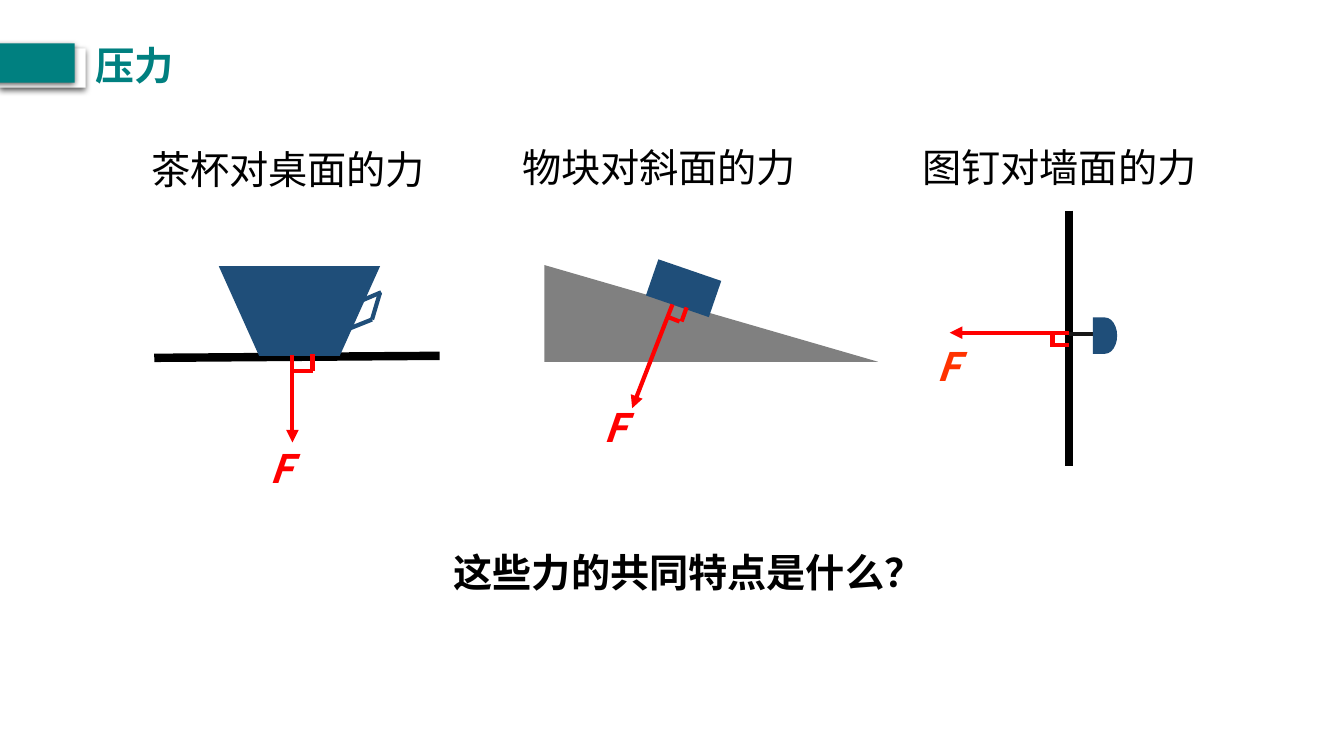
from collections import namedtuple

from lxml.etree import SubElement
from pptx import Presentation
from pptx.dml.color import RGBColor
from pptx.enum.shapes import MSO_CONNECTOR as Connector, MSO_SHAPE as Preset
from pptx.oxml.ns import qn
from pptx.util import Pt

PX = 9144
LINE_HEIGHT = 57
FONT = "Noto Sans CJK SC"
BLACK = RGBColor(0x00, 0x00, 0x00)
NEEDLE = RGBColor(0x18, 0x17, 0x17)
WHITE = RGBColor(0xFF, 0xFF, 0xFF)
NAVY = RGBColor(0x1F, 0x4E, 0x79)
GRAY = RGBColor(0x80, 0x80, 0x80)
TEAL = RGBColor(0x00, 0x80, 0x80)
RED = RGBColor(0xFF, 0x00, 0x00)
ORANGE = RGBColor(0xFF, 0x33, 0x00)

Box = namedtuple("Box", "left top width height")
HEADING = {"bold": False, "italic": False}
STRONG = {"bold": True, "italic": False}
SYMBOL = {"bold": True, "italic": True}


def within(box, left, top, width, height):
    return Box(box.left + left, box.top + top, width, height)


def emu(box):
    return [length * PX for length in box]


def write(shapes, box, words, color, style):
    frame = shapes.add_textbox(*emu(box)).text_frame
    frame.word_wrap = True
    run = frame.paragraphs[0].add_run()
    run.text = words
    run.font.color.rgb = color
    for attribute, value in {"size": Pt(28), "name": FONT, **style}.items():
        setattr(run.font, attribute, value)
    SubElement(run.font._element, qn("a:ea"), typeface=FONT)


def paint(shape, color):
    shape.shadow.inherit = False
    shape.fill.solid()
    shape.fill.fore_color.rgb = color
    shape.line.fill.background()
    return shape


def solid(shapes, preset, box, color, rotation=0):
    shape = paint(shapes.add_shape(preset, *emu(box)), color)
    shape.rotation = rotation
    return shape


def stroke(shapes, box, segments, color, width=3, arrow=False):
    for x1, y1, x2, y2 in segments:
        segment = shapes.add_connector(
            Connector.STRAIGHT,
            (box.left + x1) * PX, (box.top + y1) * PX,
            (box.left + x2) * PX, (box.top + y2) * PX,
        )
        segment.line.color.rgb = color
        segment.line.width = Pt(width)
        if arrow:
            SubElement(segment.line._get_or_add_ln(), qn("a:tailEnd"), type="triangle")
        SubElement(segment._element.spPr, qn("a:effectLst"))


def draw_force(shapes, box, arrow, label, color=RED):
    stroke(shapes, box, [arrow], RED, arrow=True)
    write(shapes, within(box, *label, LINE_HEIGHT), "F", color, SYMBOL)


def draw_heading(shapes, box, words):
    write(shapes, box._replace(height=LINE_HEIGHT), words, BLACK, HEADING)


def draw_cup(shapes, box):
    stroke(shapes, box, [(13, 216, 296, 214)], BLACK, 6)
    outline = [(box.left + x, box.top + y)
               for x, y in [(77, 125), (117, 214), (197, 214), (237, 125)]]
    builder = shapes.build_freeform(*outline[0], scale=PX)
    builder.add_line_segments(outline[1:], close=True)
    paint(builder.convert_to_shape(), NAVY)
    handle = [(237, 151, 229, 178), (212, 162, 238, 151), (204, 188, 229, 178)]
    stroke(shapes, box, handle, NAVY)
    draw_force(shapes, box, (150, 213, 150, 300), (117, 297, 152))
    stroke(shapes, box, [(148, 229, 170, 229), (170, 229, 170, 212)], RED)
    draw_heading(shapes, box, "茶杯对桌面的力")


def draw_incline(shapes, box):
    solid(shapes, Preset.RIGHT_TRIANGLE, within(box, 32, 126, 331, 96), GRAY)
    solid(shapes, Preset.RECTANGLE, within(box, 137, 130, 66, 38), NAVY, 19)
    draw_force(shapes, box, (159, 165, 119, 268), (81, 258, 160))
    stroke(shapes, box, [(156, 178, 166, 182), (173, 168, 168, 182)], RED)
    draw_heading(shapes, box, "物块对斜面的力")


def draw_thumbtack(shapes, box):
    stroke(shapes, box, [(155, 72, 155, 325)], BLACK, 6)
    stroke(shapes, box, [(155, 194, 179, 194)], NEEDLE)
    solid(shapes, Preset.FLOWCHART_DELAY, within(box, 179, 178, 24, 36), NAVY)
    draw_force(shapes, box, (155, 193, 37, 193), (14, 198, 68), ORANGE)
    stroke(shapes, box, [(139, 205, 155, 205), (139, 207, 139, 191)], RED)
    draw_heading(shapes, box, "图钉对墙面的力")


def draw_title(shapes, box):
    for left, top, color in [(0, 12, WHITE), (-11, 7, TEAL)]:
        bar = solid(shapes, Preset.RECTANGLE, within(box, left, top, 85, 39), color)
        shadow = SubElement(
            bar._element.spPr.find(qn("a:effectLst")), qn("a:outerShdw"),
            blurRad=str(Pt(4.5)), dist=str(Pt(1.5)), dir="5400000",
            algn="ctr", rotWithShape="0",
        )
        tint = SubElement(shadow, qn("a:srgbClr"), val=str(BLACK))
        SubElement(tint, qn("a:alpha"), val="63000")
    write(shapes, within(box, 85, 0, box.width - 85, box.height), "压力", TEAL, STRONG)


def draw_question(shapes, box):
    write(shapes, box, "这些力的共同特点是什么？", BLACK, STRONG)


def main():
    deck = Presentation()
    deck.slide_width, deck.slide_height = 1333 * PX, 750 * PX
    shapes = deck.slides.add_slide(deck.slide_layouts[6]).shapes
    draw_cup(shapes, Box(140, 139, 294, 354))
    draw_incline(shapes, Box(508, 137, 294, 354))
    draw_thumbtack(shapes, Box(905, 137, 294, 354))
    draw_question(shapes, Box(440, 539, 612, LINE_HEIGHT))
    draw_title(shapes, Box(0, 36, 502, LINE_HEIGHT))
    deck.save("out.pptx")


if __name__ == "__main__":
    main()
